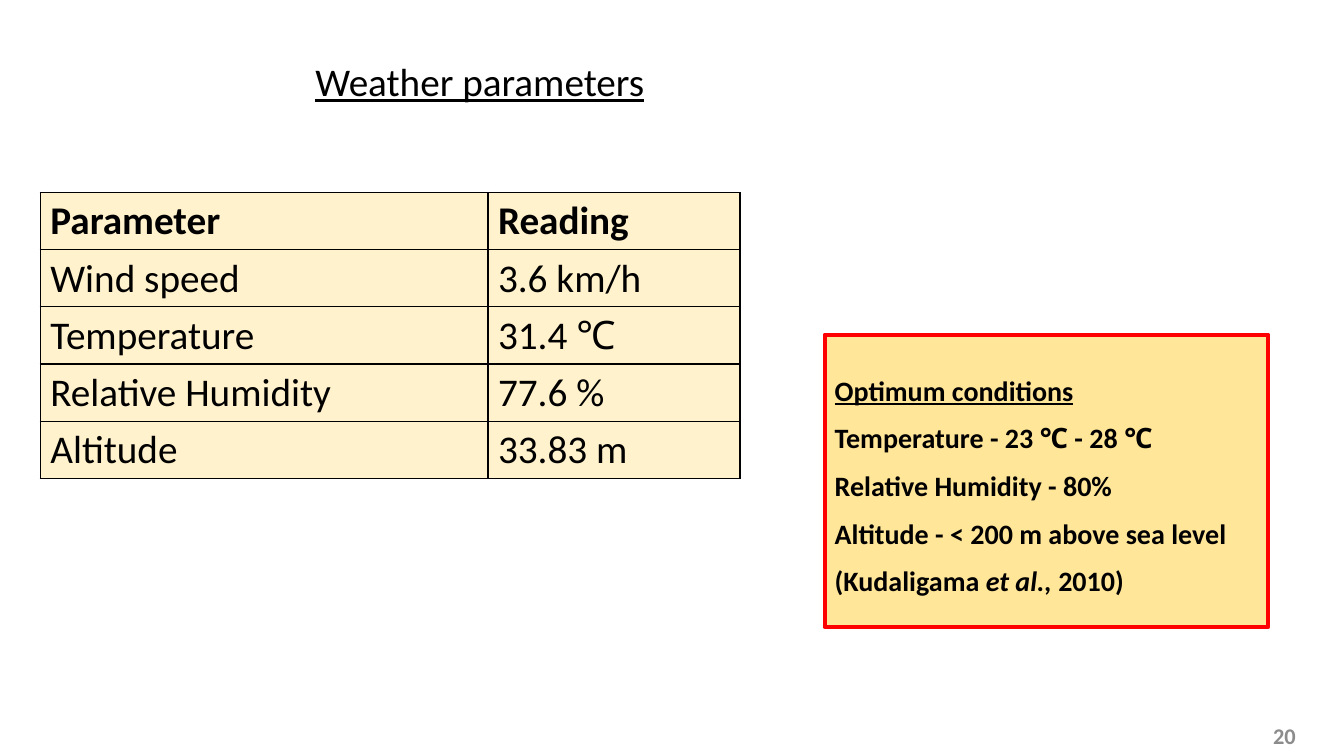
from dataclasses import dataclass

from lxml import etree
from pptx import Presentation
from pptx import util as u
from pptx.dml import color
from pptx.enum import shapes, text
from pptx.oxml import ns

COLORS = {
    "ink": "000000",
    "page_number": "8C8C8C",
    "panel": "FFE699",
    "panel_edge": "FF0000",
    "cell": "FFF2CC",
}


@dataclass(frozen=True)
class Span:
    words: str
    underline: bool = False
    italic: bool = False


@dataclass(frozen=True)
class Area:
    left: float
    top: float
    width: float
    height: float

    def lengths(self) -> tuple:
        return tuple(map(u.Inches, (self.left, self.top, self.width, self.height)))


READINGS = [
    ("Parameter", "Reading"),
    ("Wind speed", "3.6 km/h"),
    ("Temperature", "31.4 ℃"),
    ("Relative Humidity", "77.6 %"),
    ("Altitude", "33.83 m"),
]
COLUMN_WIDTHS = (4.44, 2.5)
OPTIMUM = [
    [Span("Optimum conditions", underline=True)],
    [Span("Temperature - 23 ℃ - 28 ℃")],
    [Span("Relative Humidity - 80%")],
    [Span("Altitude - < 200 m above sea level")],
    [Span("(Kudaligama "), Span("et al., ", italic=True), Span("2010)")],
]


def rgb(name: str) -> color.RGBColor:
    return color.RGBColor.from_string(COLORS[name])


def style(font, size: float, ink: str = "ink", bold: bool = False) -> None:
    font.name = "Calibri"
    font.size = u.Pt(size)
    font.bold = bold
    font.color.rgb = rgb(ink)


def add_label(page, area: Area, words: str, size: float, ink: str = "ink",
              bold: bool = False, underline: bool = False,
              align=text.PP_ALIGN.LEFT, anchor=text.MSO_ANCHOR.TOP) -> None:
    frame = page.shapes.add_textbox(*area.lengths()).text_frame
    frame.word_wrap = True
    frame.vertical_anchor = anchor
    frame.text = words
    para = frame.paragraphs[0]
    para.alignment = align
    span = para.runs[0]
    style(span.font, size, ink, bold)
    span.font.underline = underline


def add_panel(page, area: Area, lines: list[list[Span]]) -> None:
    box = page.shapes.add_shape(shapes.MSO_SHAPE.RECTANGLE, *area.lengths())
    box.shadow.inherit = False
    box.fill.solid()
    box.fill.fore_color.rgb = rgb("panel")
    box.line.color.rgb = rgb("panel_edge")
    box.line.width = u.Pt(3)
    frame = box.text_frame
    frame.word_wrap = True
    frame.vertical_anchor = text.MSO_ANCHOR.TOP
    for index, spans in enumerate(lines):
        para = frame.add_paragraph() if index else frame.paragraphs[0]
        para.alignment = text.PP_ALIGN.JUSTIFY
        para.line_spacing = 1.0 if index else 2.0
        para.space_after = u.Pt(10)
        for part in spans:
            span = para.add_run()
            span.text = part.words
            style(span.font, 20, bold=True)
            span.font.underline = part.underline
            span.font.italic = part.italic


def add_borders(cell) -> None:
    properties = cell._tc.get_or_add_tcPr()
    for side in ("a:lnL", "a:lnR", "a:lnT", "a:lnB"):
        line = etree.SubElement(properties, ns.qn(side), w=str(u.Pt(1)))
        fill = etree.SubElement(line, ns.qn("a:solidFill"))
        etree.SubElement(fill, ns.qn("a:srgbClr"), val=COLORS["ink"])


def add_readings(page, area: Area) -> None:
    table = page.shapes.add_table(
        len(READINGS), len(COLUMN_WIDTHS), *area.lengths()).table
    table.first_row = False
    table.horz_banding = False
    for column, width in zip(table.columns, COLUMN_WIDTHS):
        column.width = u.Inches(width)
    for row_index, values in enumerate(READINGS):
        for column_index, value in enumerate(values):
            cell = table.cell(row_index, column_index)
            add_borders(cell)
            cell.fill.solid()
            cell.fill.fore_color.rgb = rgb("cell")
            cell.text_frame.text = value
            span = cell.text_frame.paragraphs[0].runs[0]
            style(span.font, 28, bold=row_index == 0)


def main() -> None:
    deck = Presentation()
    deck.slide_width = u.Inches(13.33)
    deck.slide_height = u.Inches(7.5)
    page = deck.slides.add_slide(deck.slide_layouts[6])
    add_label(page, Area(9.95, 7.1, 3, 0.4), "20", 16, "page_number", bold=True,
              align=text.PP_ALIGN.RIGHT, anchor=text.MSO_ANCHOR.MIDDLE)
    add_panel(page, Area(8.18, 3.32, 4.4, 2.9), OPTIMUM)
    add_label(page, Area(3.03, 0.52, 10.3, 0.57), "Weather parameters", 28,
              underline=True)
    add_readings(page, Area(0.4, 1.91, sum(COLUMN_WIDTHS), 2.83))
    deck.save("out.pptx")


if __name__ == "__main__":
    main()
